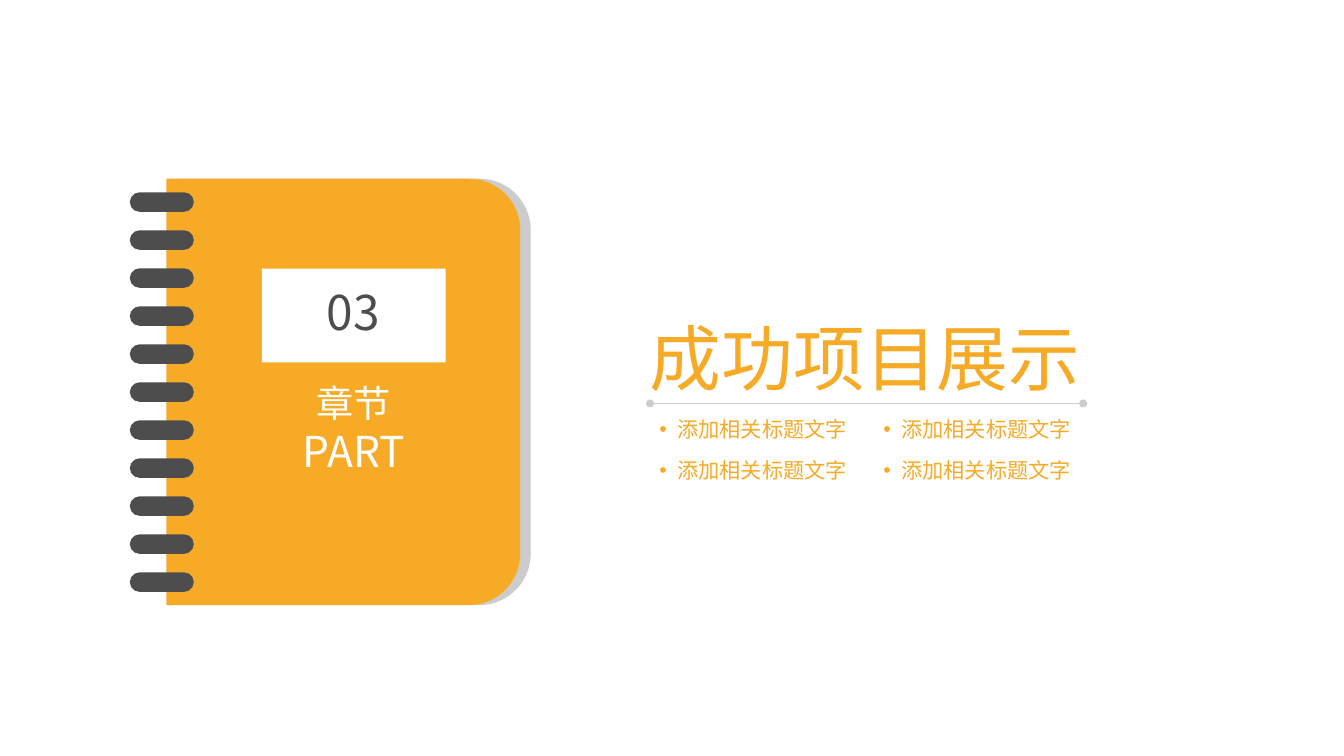
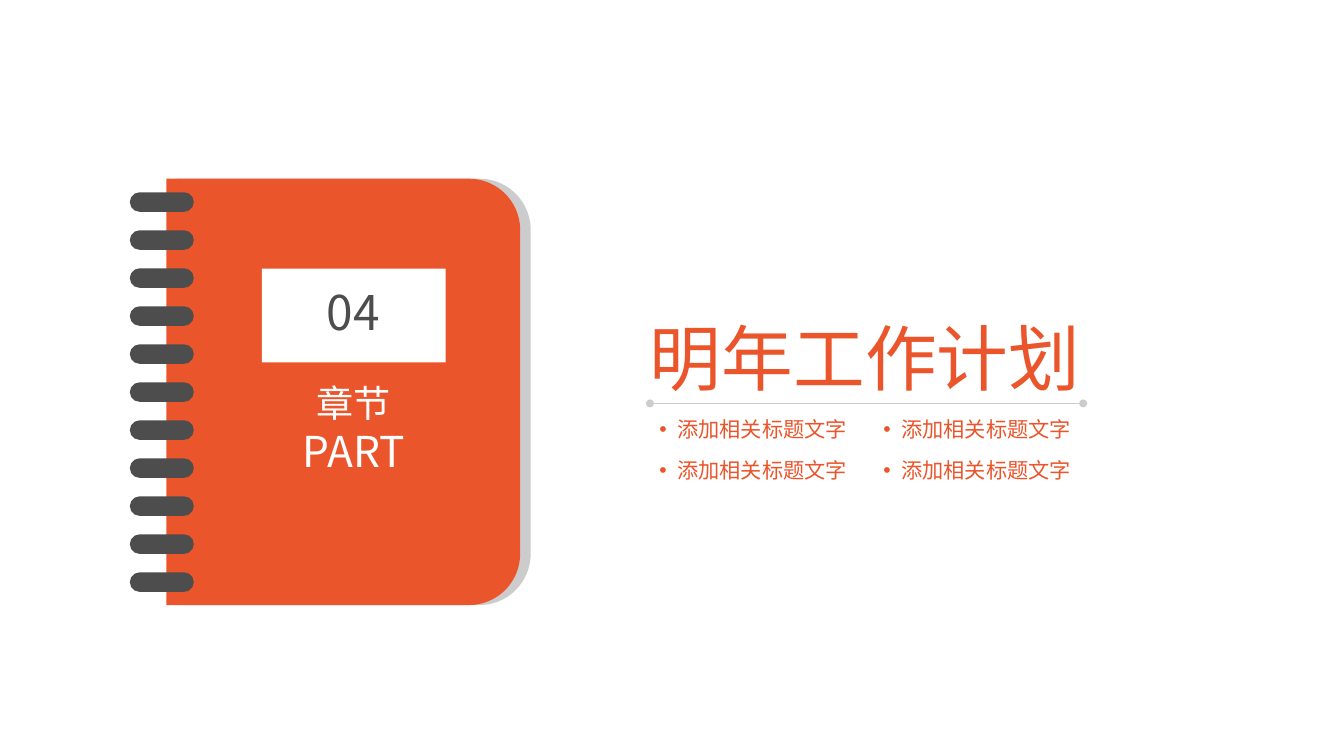
"""Build two section slides, each with a spiral notebook and a titled topic list."""
from lxml.etree import SubElement
from pptx import Presentation
from pptx.dml.color import RGBColor
from pptx.enum.shapes import MSO_CONNECTOR, MSO_SHAPE
from pptx.enum.text import MSO_ANCHOR, MSO_AUTO_SIZE, PP_ALIGN
from pptx.oxml.ns import qn
from pptx.util import Cm, Pt

ORANGE = RGBColor(0xF6, 0xAA, 0x26)
RED = RGBColor(0xEA, 0x55, 0x2B)
GRAY = RGBColor(0xCC, 0xCC, 0xCC)
DARK = RGBColor(0x4D, 0x4D, 0x4D)
WHITE = RGBColor(0xFF, 0xFF, 0xFF)
HEADING_FONT = "Arial"
NOTEBOOK_FONT = "Noto Sans CJK SC"

SECTIONS = [("03", "成功项目展示", ORANGE), ("04", "明年工作计划", RED)]
TOPIC = "添加相关标题文字"
TEXT_LEFT = 17.27
COLUMN_PITCH = 5.95
COVER_WIDTH, COVER_HEIGHT = 9.4, 11.33
RING_COUNT, RING_PITCH = 11, 1.01


def add_filled_shape(shapes, kind, left, top, width, height, color):
    shape = shapes.add_shape(kind, Cm(left), Cm(top), Cm(width), Cm(height))
    shape.shadow.inherit = False
    shape.fill.solid()
    shape.fill.fore_color.rgb = color
    shape.line.fill.background()
    return shape


def write_lines(text_frame, lines, font_name, color, alignment, margin=0, gap=0):
    text_frame.text = "\n".join(text for text, size in lines)
    text_frame.word_wrap = True
    text_frame.auto_size = MSO_AUTO_SIZE.NONE
    text_frame.vertical_anchor = MSO_ANCHOR.TOP
    text_frame.margin_left = text_frame.margin_right = Cm(margin)
    text_frame.margin_top = text_frame.margin_bottom = Cm(margin / 2)
    for paragraph, (text, size) in zip(text_frame.paragraphs, lines):
        paragraph.alignment = alignment
        paragraph.space_before = Pt(0)
        paragraph.space_after = Pt(gap)
        paragraph.font.size = Pt(size)
        paragraph.font.color.rgb = color
        paragraph.font.name = font_name
        properties = paragraph._p.pPr.find(qn("a:defRPr"))
        SubElement(properties, qn("a:ea")).set("typeface", font_name)


presentation = Presentation()
presentation.slide_width = Cm(35.71)
presentation.slide_height = Cm(20.09)
two_content_layout = presentation.slide_layouts[3]

for number, heading, accent in SECTIONS:
    slide = presentation.slides.add_slide(two_content_layout)

    title, *columns = slide.placeholders
    title.left, title.top = Cm(TEXT_LEFT), Cm(8.31)
    title.width, title.height = Cm(12.42), Cm(2.31)
    write_lines(title.text_frame, [(heading, 54)], HEADING_FONT, accent, PP_ALIGN.LEFT)
    title.text_frame.vertical_anchor = MSO_ANCHOR.BOTTOM

    for index, column in enumerate(columns):
        column.left, column.top = Cm(TEXT_LEFT + index * COLUMN_PITCH), Cm(10.95)
        column.width, column.height = Cm(COLUMN_PITCH), Cm(1.98)
        write_lines(column.text_frame, [(TOPIC, 16)] * 2, HEADING_FONT, accent,
                    PP_ALIGN.LEFT, margin=0.25, gap=11.5)
        for paragraph in column.text_frame.paragraphs:
            paragraph._p.pPr.set("marL", str(Cm(0.48)))
            paragraph._p.pPr.set("indent", str(-Cm(0.48)))

    rule = slide.shapes.add_connector(
        MSO_CONNECTOR.STRAIGHT, Cm(TEXT_LEFT), Cm(10.72), Cm(28.78), Cm(10.72))
    rule.line.color.rgb = GRAY
    rule.line.width = Pt(1)
    for end in ("a:headEnd", "a:tailEnd"):
        SubElement(rule.line._get_or_add_ln(), qn(end)).set("type", "oval")
    SubElement(rule._element.spPr, qn("a:effectLst"))

    notebook = slide.shapes.add_group_shape().shapes
    turn_offset = (COVER_HEIGHT - COVER_WIDTH) / 2
    for left, color in ((4.7, GRAY), (4.42, accent)):
        cover = add_filled_shape(
            notebook, MSO_SHAPE.ROUND_2_SAME_RECTANGLE, left - turn_offset,
            4.75 + turn_offset, COVER_HEIGHT, COVER_WIDTH, color)
        cover.adjustments[0] = 0.145
        cover.rotation = 90

    add_filled_shape(notebook, MSO_SHAPE.RECTANGLE, 6.96, 7.14, 4.88, 2.49, WHITE)
    for index in range(RING_COUNT):
        ring = add_filled_shape(notebook, MSO_SHAPE.ROUNDED_RECTANGLE, 3.45,
                                5.11 + index * RING_PITCH, 1.7, 0.52, DARK)
        ring.adjustments[0] = 0.5

    number_box = notebook.add_textbox(Cm(7.09), Cm(7.52), Cm(4.6), Cm(1.55))
    write_lines(number_box.text_frame, [(number, 36)], NOTEBOOK_FONT, DARK, PP_ALIGN.CENTER)
    part_box = notebook.add_textbox(Cm(7.47), Cm(10.11), Cm(3.86), Cm(2.84))
    write_lines(part_box.text_frame, [("章节", 28), ("PART", 32)], NOTEBOOK_FONT, WHITE,
                PP_ALIGN.CENTER)

presentation.save("out.pptx")
